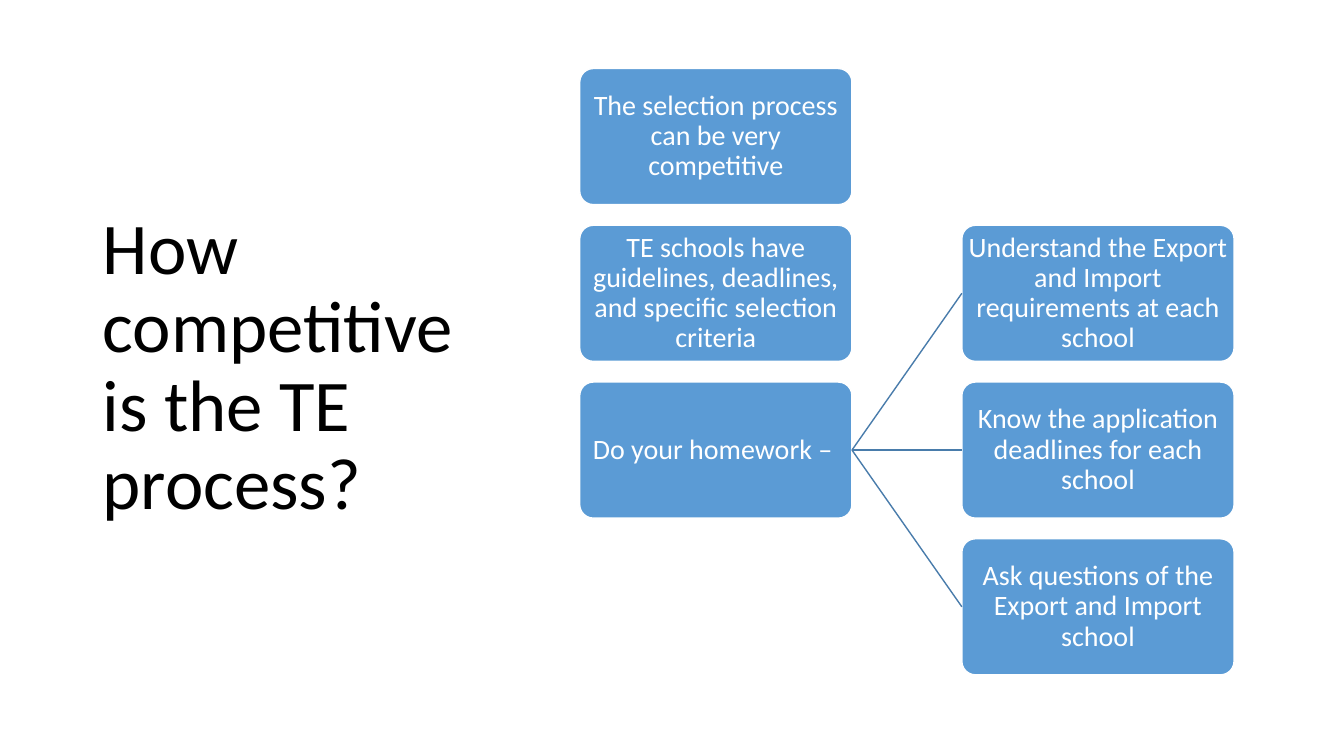
from pptx import Presentation
from pptx.dml.color import RGBColor
from pptx.enum.shapes import MSO_CONNECTOR as Connector, MSO_SHAPE as Shape
from pptx.enum.text import MSO_ANCHOR as Anchor, PP_ALIGN as Align
from pptx.oxml.ns import qn
from pptx.util import Inches, Pt
from lxml.etree import SubElement

COLORS = {"box": "5B9BD5", "link": "497CAB", "light": "FFFFFF", "title": "000000"}


class TreeSlide:
    """Style, grid and current slide of a two-column tree."""

    font = "Calibri"
    left, top = 5.75, 0.68
    box_width, box_height = 2.7, 1.35
    column_step, row_step = 3.79, 1.555
    right_side, left_side = 3, 1

    def __init__(self, deck):
        self.page = deck.slides.add_slide(deck.slide_layouts[6])

    def color(self, name):
        return RGBColor.from_string(COLORS[name])

    def set_text(self, frame, text, size, color, align):
        frame.word_wrap = True
        frame.vertical_anchor = Anchor.MIDDLE
        frame.text = text
        para = frame.paragraphs[0]
        para.alignment = align
        para.line_spacing = 0.9
        font = para.runs[0].font
        font.name, font.size = self.font, Pt(size)
        font.color.rgb = self.color(color)

    def title(self, text, left, top, width, height):
        box = self.page.shapes.add_textbox(
            Inches(left), Inches(top), Inches(width), Inches(height))
        self.set_text(box.text_frame, text, 52, "title", Align.LEFT)

    def box(self, text, column, row):
        box = self.page.shapes.add_shape(
            Shape.ROUNDED_RECTANGLE,
            Inches(self.left + column * self.column_step),
            Inches(self.top + row * self.row_step),
            Inches(self.box_width), Inches(self.box_height))
        box.adjustments[0] = 0.1
        box.shadow.inherit = False
        box.fill.solid()
        box.fill.fore_color.rgb = self.color("box")
        box.line.color.rgb = self.color("light")
        box.line.width = Pt(1)
        frame = box.text_frame
        frame.margin_left = frame.margin_right = Inches(0.01)
        frame.margin_top = frame.margin_bottom = Inches(0.01)
        self.set_text(frame, text, 20, "light", Align.CENTER)
        return box

    def link(self, parent, child):
        line = self.page.shapes.add_connector(Connector.STRAIGHT, 0, 0, 0, 0)
        line.begin_connect(parent, self.right_side)
        line.end_connect(child, self.left_side)
        line.line.color.rgb = self.color("link")
        line.line.width = Pt(1)
        SubElement(line._element.spPr, qn("a:effectLst"))


def main():
    deck = Presentation()
    deck.slide_width, deck.slide_height = Inches(13.33), Inches(7.5)
    slide = TreeSlide(deck)
    slide.title("How competitive is the TE process?", 0.92, 0.61, 3.69, 6.09)

    points = [
        "The selection process can be very competitive",
        "TE schools have guidelines, deadlines, and specific selection criteria",
        "Do your homework – ",
    ]
    tasks = [
        "Understand the Export and Import requirements at each school",
        "Know the application deadlines for each school",
        "Ask questions of the Export and Import school",
    ]
    homework = [slide.box(text, 0, row) for row, text in enumerate(points)][-1]
    for row, text in enumerate(tasks, start=1):
        slide.link(homework, slide.box(text, 1, row))

    deck.save("out.pptx")


if __name__ == "__main__":
    main()
